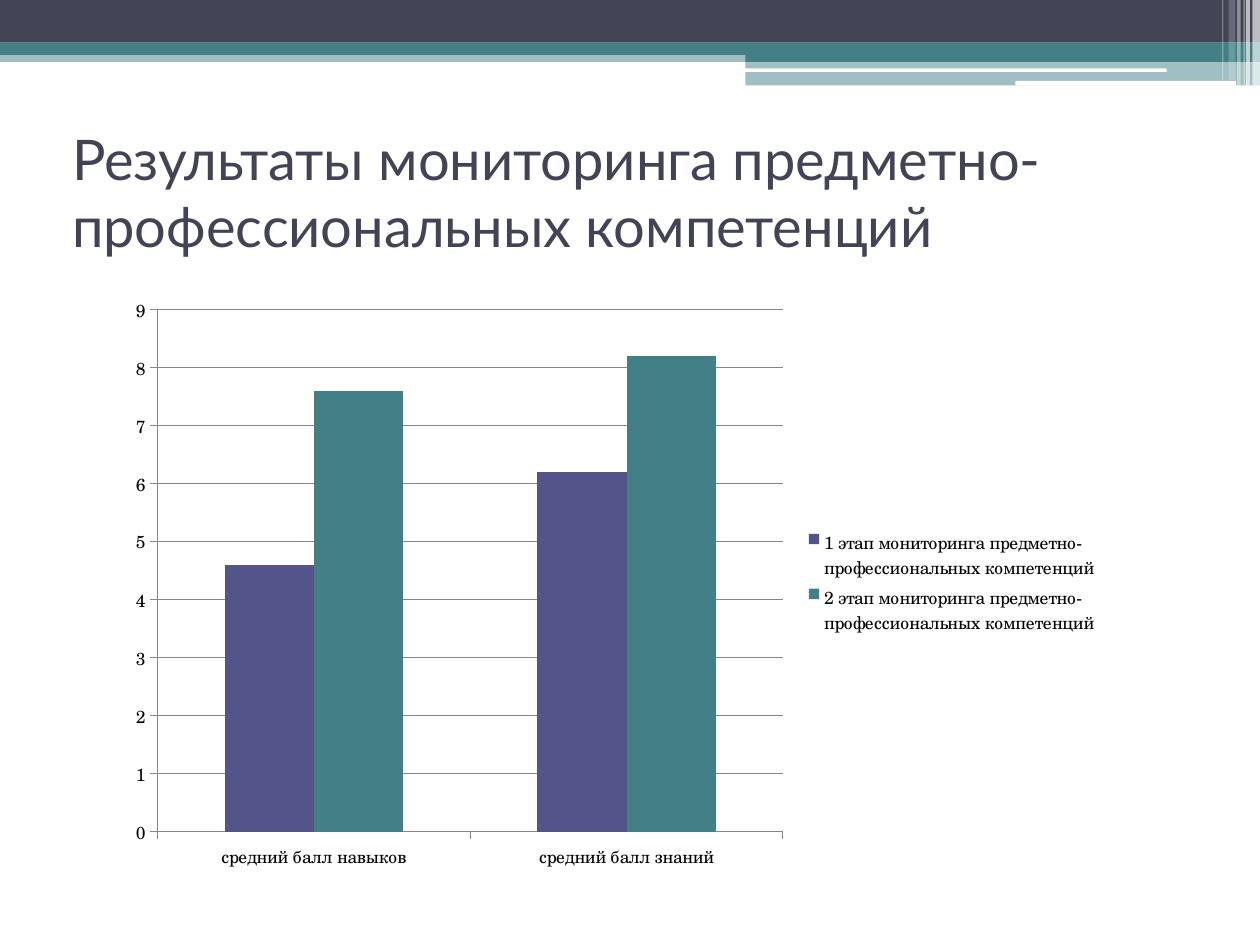
from dataclasses import dataclass

from lxml.etree import SubElement
from pptx import Presentation
from pptx.chart.data import CategoryChartData
from pptx.dml.color import RGBColor
from pptx.enum.chart import XL_CHART_TYPE, XL_LEGEND_POSITION, XL_TICK_MARK
from pptx.enum.shapes import MSO_SHAPE
from pptx.enum.text import MSO_ANCHOR, MSO_AUTO_SIZE, PP_ALIGN
from pptx.oxml.ns import qn
from pptx.util import Pt


@dataclass(frozen=True)
class Theme:
    navy: RGBColor = RGBColor.from_string("424456")
    teal: RGBColor = RGBColor.from_string("438086")
    violet: RGBColor = RGBColor.from_string("53548A")
    white: RGBColor = RGBColor.from_string("FFFFFF")
    black: RGBColor = RGBColor.from_string("000000")
    grid: RGBColor = RGBColor.from_string("868686")
    title_font: str = "Lato"
    chart_font: str = "TeX Gyre Schola"
    title_size: int = 32
    chart_size: int = 10


def apply_format(target, values):
    for attribute, value in values.items():
        setattr(target, attribute, value)


def place(element, box):
    apply_format(element, dict(zip(("left", "top", "width", "height"), map(Pt, box))))


class SlideBuilder:
    def __init__(self, slide, theme):
        self.slide = slide
        self.theme = theme

    def band(self, box, color, opacity=100, rounding=None):
        kind = MSO_SHAPE.RECTANGLE if rounding is None else MSO_SHAPE.ROUNDED_RECTANGLE
        band = self.slide.shapes.add_shape(kind, *map(Pt, box))
        if rounding is not None:
            band.adjustments[0] = rounding
        band.shadow.inherit = False
        band.fill.solid()
        band.fill.fore_color.rgb = color
        band.line.fill.background()
        if opacity < 100:
            color_node = band.fill._xPr.find(qn("a:solidFill"))[0]
            SubElement(color_node, qn("a:alpha"), val=str(opacity * 1000))

    def title(self, text, box):
        heading = self.slide.shapes.title
        place(heading, box)
        frame = heading.text_frame
        frame.text = text
        apply_format(frame, {
            "word_wrap": True,
            "auto_size": MSO_AUTO_SIZE.NONE,
            "vertical_anchor": MSO_ANCHOR.MIDDLE,
        })
        paragraph = frame.paragraphs[0]
        paragraph.alignment = PP_ALIGN.LEFT
        font = paragraph.runs[0].font
        apply_format(font, {
            "name": self.theme.title_font,
            "size": Pt(self.theme.title_size),
        })
        font.color.rgb = self.theme.navy

    def column_chart(self, categories, stages, box, plot_area):
        scores = CategoryChartData()
        scores.categories = categories
        for name, values, _ in stages:
            scores.add_series(name, values)
        chart = self.slide.shapes.add_chart(
            XL_CHART_TYPE.COLUMN_CLUSTERED, *map(Pt, box), scores).chart
        apply_format(chart, {"has_title": False, "has_legend": True})
        apply_format(chart.legend, {
            "position": XL_LEGEND_POSITION.RIGHT,
            "include_in_layout": False,
        })
        apply_format(chart.font, {
            "name": self.theme.chart_font,
            "size": Pt(self.theme.chart_size),
        })
        chart.font.color.rgb = self.theme.black
        columns = chart.plots[0]
        apply_format(columns, {"gap_width": 150, "overlap": 0, "vary_by_categories": False})
        for series, (_, _, color) in zip(columns.series, stages):
            series.invert_if_negative = False
            series.format.fill.solid()
            series.format.fill.fore_color.rgb = color
        self.axes(chart)
        self.plot_layout(chart, plot_area)

    def axes(self, chart):
        for axis in (chart.category_axis, chart.value_axis):
            apply_format(axis, {
                "major_tick_mark": XL_TICK_MARK.OUTSIDE,
                "minor_tick_mark": XL_TICK_MARK.NONE,
            })
            self.rule(axis.format.line)
        apply_format(chart.value_axis, {
            "minimum_scale": 0,
            "maximum_scale": 9,
            "major_unit": 1,
            "has_major_gridlines": True,
        })
        self.rule(chart.value_axis.major_gridlines.format.line)

    def rule(self, line):
        line.color.rgb = self.theme.grid
        line.width = Pt(0.75)

    def plot_layout(self, chart, plot_area):
        plot = chart.plots[0]._element.getparent()
        layout = plot.find(qn("c:layout"))
        if layout is None:
            layout = plot.makeelement(qn("c:layout"), {})
            plot.insert(0, layout)
        manual = SubElement(layout, qn("c:manualLayout"))
        settings = {"layoutTarget": "inner", "xMode": "edge", "yMode": "edge", **plot_area}
        for tag, value in settings.items():
            SubElement(manual, qn(f"c:{tag}"), val=str(value))


def main():
    theme = Theme()
    deck = Presentation()
    apply_format(deck, {"slide_width": Pt(720), "slide_height": Pt(540)})
    builder = SlideBuilder(deck.slides.add_slide(deck.slide_layouts[5]), theme)

    builder.band((0, 28.8, 720, 6.6), theme.teal, 50)
    builder.band((0, 0, 720, 24.4), theme.navy)
    builder.band((0, 24.2, 720, 7.2), theme.teal)
    builder.band((426, 28.2, 294, 7.2), theme.teal)
    builder.band((426, 34.6, 294, 14.2), theme.teal, 50)
    for highlight in ((425.4, 39.1, 241.2, 2), (580.2, 46.3, 126, 2.6)):
        builder.band(highlight, theme.white, rounding=0.17)

    stripes = [
        (715.6, 4.4, 49, 65),
        (712, 2.2, 49, 65),
        (710.6, 0.7, 49, 60),
        (707, 2, 49, 40),
        (702, 4, 46, 20),
        (698.4, 0.7, 46, 30),
    ]
    for left, width, height, opacity in stripes:
        builder.band((left, 0, width, height), theme.white, opacity)

    builder.title("Результаты мониторинга предметно-профессиональных компетенций",
                  (34, 67.5, 648, 84))
    stage_name = "{} этап мониторинга предметно-профессиональных компетенций"
    builder.column_chart(
        ("средний балл навыков", "средний балл знаний"),
        [
            (stage_name.format(1), (4.6, 6.2), theme.violet),
            (stage_name.format(2), (7.6, 8.2), theme.teal),
        ],
        (67.5, 163.5, 567, 339),
        {"x": 0.04, "y": 0.04, "w": 0.63, "h": 0.88},
    )
    deck.save("out.pptx")


if __name__ == "__main__":
    main()
